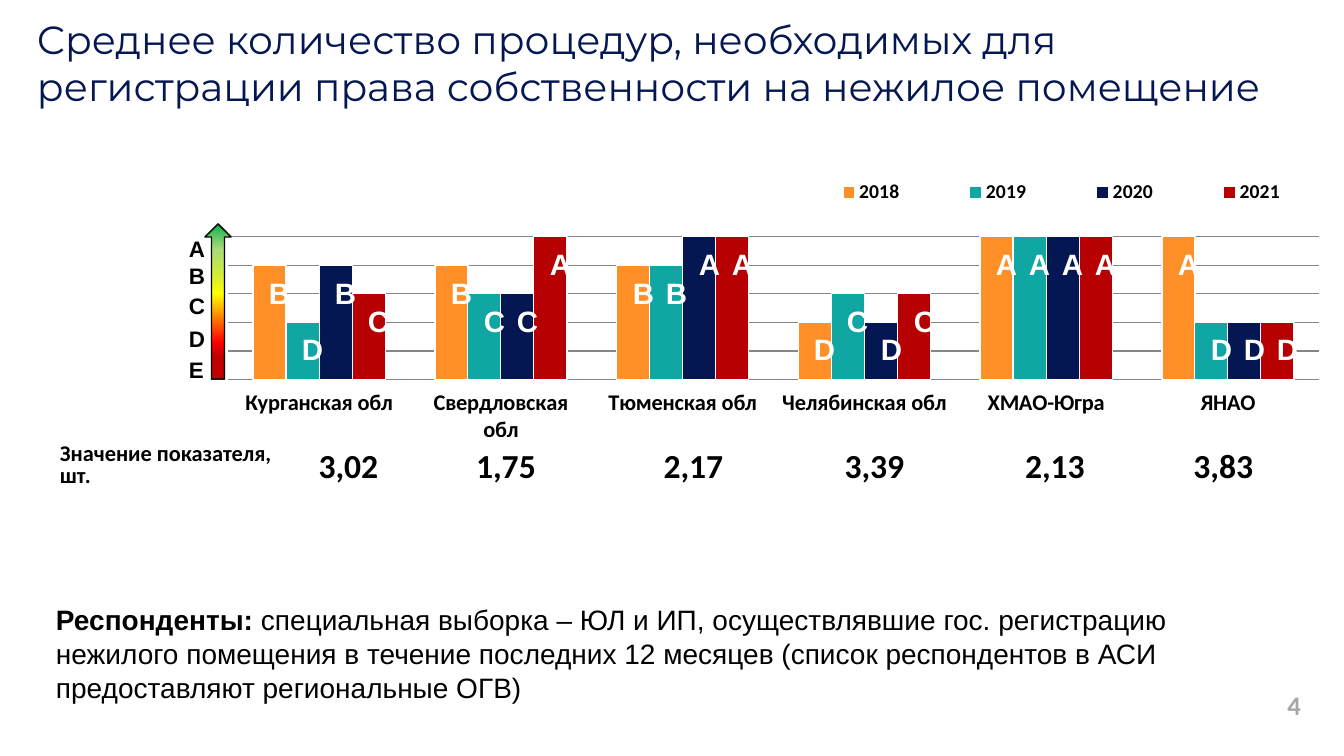
from lxml import etree
from pptx import Presentation
from pptx.chart.data import CategoryChartData
from pptx.dml.color import RGBColor
from pptx.enum.chart import XL_CHART_TYPE, XL_LEGEND_POSITION, XL_TICK_LABEL_POSITION, XL_TICK_MARK
from pptx.enum.shapes import MSO_SHAPE
from pptx.enum.text import MSO_ANCHOR, MSO_AUTO_SIZE, PP_ALIGN
from pptx.oxml import parse_xml
from pptx.oxml.ns import qn
from pptx.util import Emu, Pt

LEFT, CENTER, RIGHT = PP_ALIGN.LEFT, PP_ALIGN.CENTER, PP_ALIGN.RIGHT
TOP, MIDDLE = MSO_ANCHOR.TOP, MSO_ANCHOR.MIDDLE
GROW, FIXED = MSO_AUTO_SIZE.SHAPE_TO_FIT_TEXT, MSO_AUTO_SIZE.NONE
NO_TICK = XL_TICK_MARK.NONE
DRAWING_NS = "http://schemas.openxmlformats.org/drawingml/2006/main"

NAVY, BLACK, WHITE, GRAY, GRID = "041752", "000000", "FFFFFF", "A6A6A6", "868686"

REGIONS = ["Курганская обл", "Свердловская обл", "Тюменская обл",
           "Челябинская обл", "ХМАО-Югра", "ЯНАО"]
YEARS = [  # year, colour, outline width, value per region
    ("2018", "FF9028", 1, [80, 80, 80, 40, 100, 100]),
    ("2019", "10A6A4", 0.75, [40, 60, 80, 60, 100, 40]),
    ("2020", NAVY, 0.75, [80, 60, 100, 40, 100, 40]),
    ("2021", "B70002", 0.75, [60, 100, 100, 60, 100, 40]),
]
GRADES = {100: "A", 80: "B", 60: "C", 40: "D"}
INDICATORS = ["3,02", "1,75", "2,17", "3,39", "2,13", "3,83"]


def px(value):
    return Emu(round(value * 914400 / 100.8))


def rgb(color):
    return RGBColor.from_string(color)


def style_font(font, size, color=BLACK, bold=False, name="Calibri"):
    font.size, font.bold, font.name = Pt(size), bold, name
    font.color.rgb = rgb(color)


def place_manually(parent, index, x, y, w, h, inner=False):
    """Give a chart part a fixed place, in fractions of the chart."""
    for old in parent.findall(qn("c:layout")):
        parent.remove(old)
    layout = etree.Element(qn("c:layout"))
    manual = etree.SubElement(layout, qn("c:manualLayout"))
    settings = [("layoutTarget", "inner")] if inner else []
    settings += [("xMode", "edge"), ("yMode", "edge"), ("x", x), ("y", y), ("w", w), ("h", h)]
    for tag, value in settings:
        etree.SubElement(manual, qn("c:" + tag)).set("val", str(value))
    parent.insert(index, layout)


class SlideBuilder:
    margins = (13, 7)

    def __init__(self, presentation):
        self.slide = presentation.slides.add_slide(presentation.slide_layouts[6])
        self.shapes = self.slide.shapes

    def text(self, box, text, size, color=BLACK, bold=False, name="Arial",
             align=LEFT, anchor=TOP, margins=margins, auto_size=GROW):
        frame = self.shapes.add_textbox(*map(px, box)).text_frame
        frame.word_wrap, frame.auto_size, frame.vertical_anchor = True, auto_size, anchor
        frame.margin_left = frame.margin_right = px(margins[0])
        frame.margin_top = frame.margin_bottom = px(margins[1])
        paragraph = frame.paragraphs[0]
        paragraph.text, paragraph.alignment = text, align
        style_font(paragraph.runs[0].font, size, color, bold, name)
        return paragraph

    def letter(self, x, y, grade, size, color, height):
        self.text((x, y, 27, height), grade, size, color, True, align=CENTER)

    def column_chart(self, box):
        data = CategoryChartData()
        data.categories = REGIONS
        for year, _, _, values in YEARS:
            data.add_series(year, values)
        chart = self.shapes.add_chart(XL_CHART_TYPE.COLUMN_CLUSTERED, *map(px, box), data).chart
        chart.has_title = False
        style_font(chart.font, 18)

        plot = chart.plots[0]
        plot.gap_width, plot.overlap, plot.vary_by_categories = 150, 0, False
        for series, (_, color, outline, _) in zip(plot.series, YEARS):
            series.format.fill.solid()
            series.format.fill.fore_color.rgb = rgb(color)
            series.format.line.color.rgb = rgb(WHITE)
            series.format.line.width = Pt(outline)

        regions, scale = chart.category_axis, chart.value_axis
        regions.major_tick_mark = regions.minor_tick_mark = NO_TICK
        regions.tick_label_position = XL_TICK_LABEL_POSITION.LOW
        regions.format.line.color.rgb = rgb(GRID)
        style_font(regions.tick_labels.font, 16, bold=True)
        scale.minimum_scale, scale.maximum_scale, scale.major_unit = 0, 100, 20
        scale.has_major_gridlines, scale.visible = True, False
        scale.major_gridlines.format.line.color.rgb = rgb(GRID)

        chart.has_legend = True
        chart.legend.position = XL_LEGEND_POSITION.BOTTOM
        chart.legend.include_in_layout = False
        style_font(chart.legend.font, 14, bold=True)
        place_manually(plot._element.getparent(), 0, 0.111, 0.299, 0.869, 0.447, inner=True)
        place_manually(chart.legend._element, 1, 0.55, 0.11, 0.45, 0.1)

    def scale_arrow(self, box, stops):
        arrow = self.shapes.add_shape(MSO_SHAPE.DOWN_ARROW, *map(px, box))
        arrow.shadow.inherit = False
        arrow.rotation = 180
        arrow.line.color.rgb = rgb(BLACK)
        arrow.line.width = Pt(1)
        stops_xml = "".join(
            f'<a:gs pos="{place * 1000}"><a:srgbClr val="{color}">'
            f'<a:alpha val="{alpha * 1000}"/></a:srgbClr></a:gs>'
            for place, color, alpha in stops)
        gradient = parse_xml(
            f'<a:gradFill xmlns:a="{DRAWING_NS}" rotWithShape="1"><a:gsLst>{stops_xml}</a:gsLst>'
            '<a:lin ang="5400000" scaled="0"/></a:gradFill>')
        arrow._element.spPr.find(qn("a:prstGeom")).addnext(gradient)

    def indicator_row(self, box, widths, heading, values):
        table = self.shapes.add_table(1, len(widths), *map(px, box)).table
        table.first_row = table.horz_banding = False
        for column, width in zip(table.columns, widths):
            column.width = px(width)
        for index, (cell, text) in enumerate(zip(table.rows[0].cells, [heading, *values])):
            cell.fill.background()
            cell.margin_left = cell.margin_right = px(self.margins[0])
            cell.margin_top = cell.margin_bottom = px(self.margins[1])
            cell.vertical_anchor = MIDDLE if index else TOP
            paragraph = cell.text_frame.paragraphs[0]
            paragraph.text = text
            paragraph.alignment = CENTER if index else LEFT
            if not index:
                paragraph.line_spacing = Pt(16)
            style_font(paragraph.runs[0].font, 24 if index else 16, bold=True)


def main():
    presentation = Presentation()
    presentation.slide_width, presentation.slide_height = px(1344), px(756)
    builder = SlideBuilder(presentation)

    # Slide number and title
    builder.text((1239, 685, 75, 40), "4", 19, GRAY, True, "Calibri", RIGHT, MIDDLE,
                 auto_size=FIXED)
    builder.text((24, 8, 1320, 156), "Среднее количество процедур, необходимых для "
                 "регистрации права собственности на нежилое помещение", 28, NAVY,
                 name="Montserrat")

    # Chart with its grade scale
    builder.column_chart((89, 141, 1255, 320))
    builder.scale_arrow((205, 224, 26, 155), [
        (15, "C00000", 100), (24, "FF0000", 100), (55, "FFFF00", 100),
        (83, "92D050", 76), (100, "00B050", 100)])
    for grade, y in zip("ABCDE", (228, 255, 285, 318, 349)):
        builder.letter(176, y, grade, 16, BLACK, 40)

    # Grade on each column
    region_width = 181.8
    column_width = region_width / 5.5
    for year_index, (_, _, _, values) in enumerate(YEARS):
        for region_index, value in enumerate(values):
            x = 256 + region_index * region_width + year_index * column_width
            y = 239 + (100 - value) / 20 * 28.5
            builder.letter(round(x), round(y), GRADES[value], 21, WHITE, 49)

    # Indicator values
    builder.indicator_row((47, 438, 1257, 58), (243, 117, 198, 177, 185, 176, 161),
                          "Значение показателя, шт.", INDICATORS)

    # Respondents
    respondents = builder.text((46, 598, 1248, 142), "Респонденты:", 20, bold=True,
                               margins=(10, 5))
    sample = respondents.add_run()
    sample.text = (" специальная выборка – ЮЛ и ИП, осуществлявшие гос. регистрацию нежилого "
                   "помещения в течение последних 12 месяцев (список респондентов в АСИ "
                   "предоставляют региональные ОГВ)")
    style_font(sample.font, 20, name="Arial")

    presentation.save("out.pptx")


if __name__ == "__main__":
    main()
